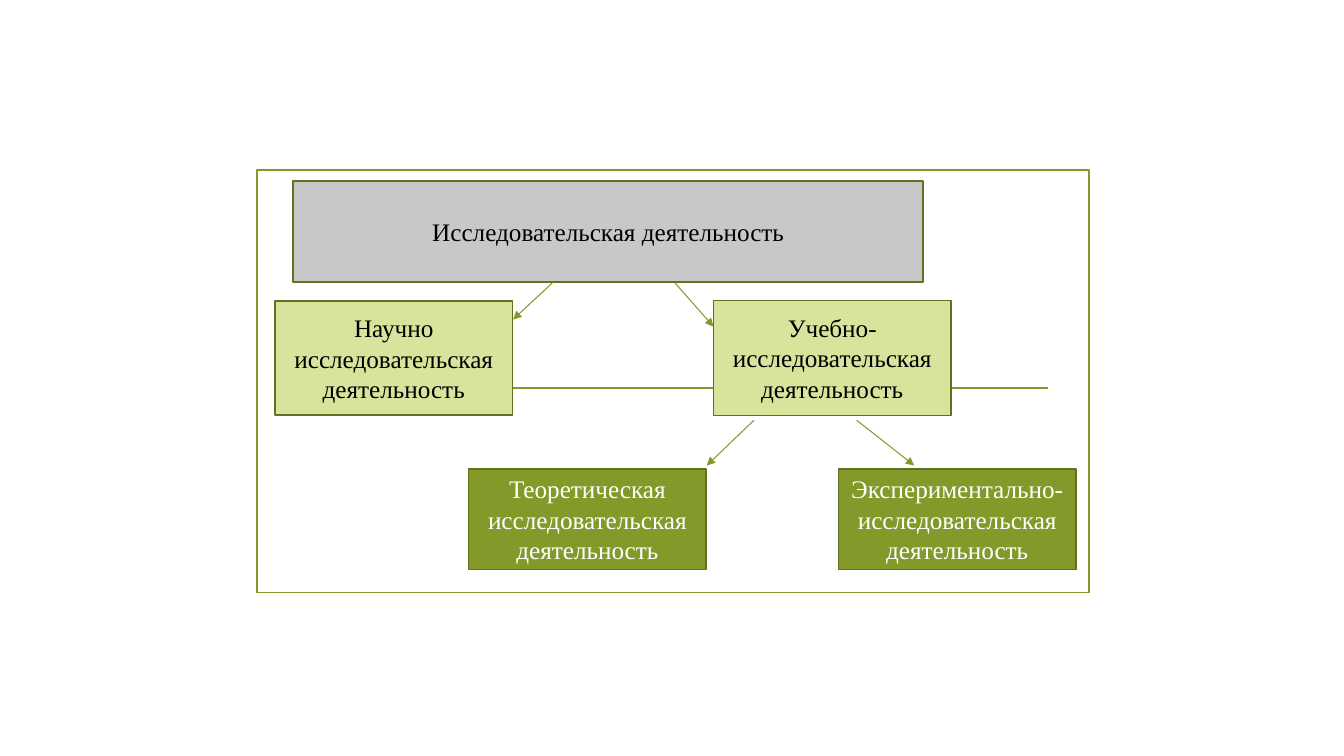
from dataclasses import dataclass

from lxml import etree
from pptx import Presentation
from pptx.dml.color import RGBColor
from pptx.enum.shapes import MSO_CONNECTOR, MSO_SHAPE
from pptx.enum.text import MSO_ANCHOR, PP_ALIGN
from pptx.oxml.ns import qn
from pptx.util import Cm, Pt

RECT = MSO_SHAPE.RECTANGLE
LINE = MSO_CONNECTOR.STRAIGHT
MIDDLE = MSO_ANCHOR.MIDDLE
CENTER = PP_ALIGN.CENTER

COLORS = {
    "olive": "83992A",
    "edge": "61711F",
    "lime": "D6E49C",
    "gray": "C8C8C8",
    "black": "000000",
    "white": "FFFFFF",
}
FONT = {"name": "Times New Roman", "size": Pt(18)}
WIDE = 5.99  # width of every lower box, cm
LOW = 11.81  # top of the bottom row, cm


@dataclass
class Box:
    left: float
    top: float
    width: float
    height: float
    fill: str = ""
    edge: str = "edge"
    text: str = ""
    ink: str = "black"


@dataclass
class Link:
    x1: float
    y1: float
    x2: float
    y2: float
    width: float = 0.75
    arrow: bool = True


FRAME = Box(6.48, 4.29, 20.96, 10.64, edge="olive")
RULE = Link(7.47, 9.78, 26.42, 9.78, width=1.25, arrow=False)
BOXES = [
    Box(7.39, 4.57, 15.88, 2.54, "gray", text="Исследовательская деятельность"),
    Box(6.93, 7.59, WIDE, 2.87, "lime",
        text="Научно исследовательская деятельность"),
    Box(17.98, 7.57, WIDE, 2.9, "lime",
        text="Учебно- исследовательская деятельность"),
    Box(11.81, LOW, WIDE, 2.54, "olive",
        text="Теоретическая исследовательская деятельность", ink="white"),
    Box(21.13, LOW, WIDE, 2.54, "olive",
        text="Экспериментально- исследовательская деятельность", ink="white"),
]
ARROWS = [
    Link(13.94, 7.11, 12.93, 8.05),
    Link(17.02, 7.14, 17.98, 8.23),
    Link(19, 10.59, 17.81, 11.73),
    Link(21.59, 10.59, 23.04, 11.73),
]


def color(name: str) -> RGBColor:
    return RGBColor.from_string(COLORS[name])


def draw_box(slide, box: Box) -> None:
    shape = slide.shapes.add_shape(
        RECT, Cm(box.left), Cm(box.top), Cm(box.width), Cm(box.height))
    shape.shadow.inherit = False
    shape.line.color.rgb = color(box.edge)
    shape.line.width = Pt(1.25)
    if box.fill:
        shape.fill.solid()
        shape.fill.fore_color.rgb = color(box.fill)
    else:
        shape.fill.background()
    if box.text:
        frame = shape.text_frame
        frame.word_wrap = True
        frame.vertical_anchor = MIDDLE
        para = frame.paragraphs[0]
        para.alignment = CENTER
        run = para.add_run()
        run.text = box.text
        for key, value in FONT.items():
            setattr(run.font, key, value)
        run.font.color.rgb = color(box.ink)


def draw_link(slide, link: Link) -> None:
    line = slide.shapes.add_connector(
        LINE, Cm(link.x1), Cm(link.y1), Cm(link.x2), Cm(link.y2))
    line.line.color.rgb = color("olive")
    line.line.width = Pt(link.width)
    if link.arrow:
        tail = etree.SubElement(line.line._get_or_add_ln(), qn("a:tailEnd"))
        tail.set("type", "triangle")
    etree.SubElement(line._element.spPr, qn("a:effectLst"))


def main() -> None:
    deck = Presentation()
    deck.slide_width = Cm(33.87)
    deck.slide_height = Cm(19.05)
    slide = deck.slides.add_slide(deck.slide_layouts[6])

    # Frame and rule behind the scheme
    draw_box(slide, FRAME)
    draw_link(slide, RULE)

    # Boxes of the scheme
    for box in BOXES:
        draw_box(slide, box)

    # Arrows between levels
    for link in ARROWS:
        draw_link(slide, link)

    deck.save("out.pptx")


if __name__ == "__main__":
    main()
